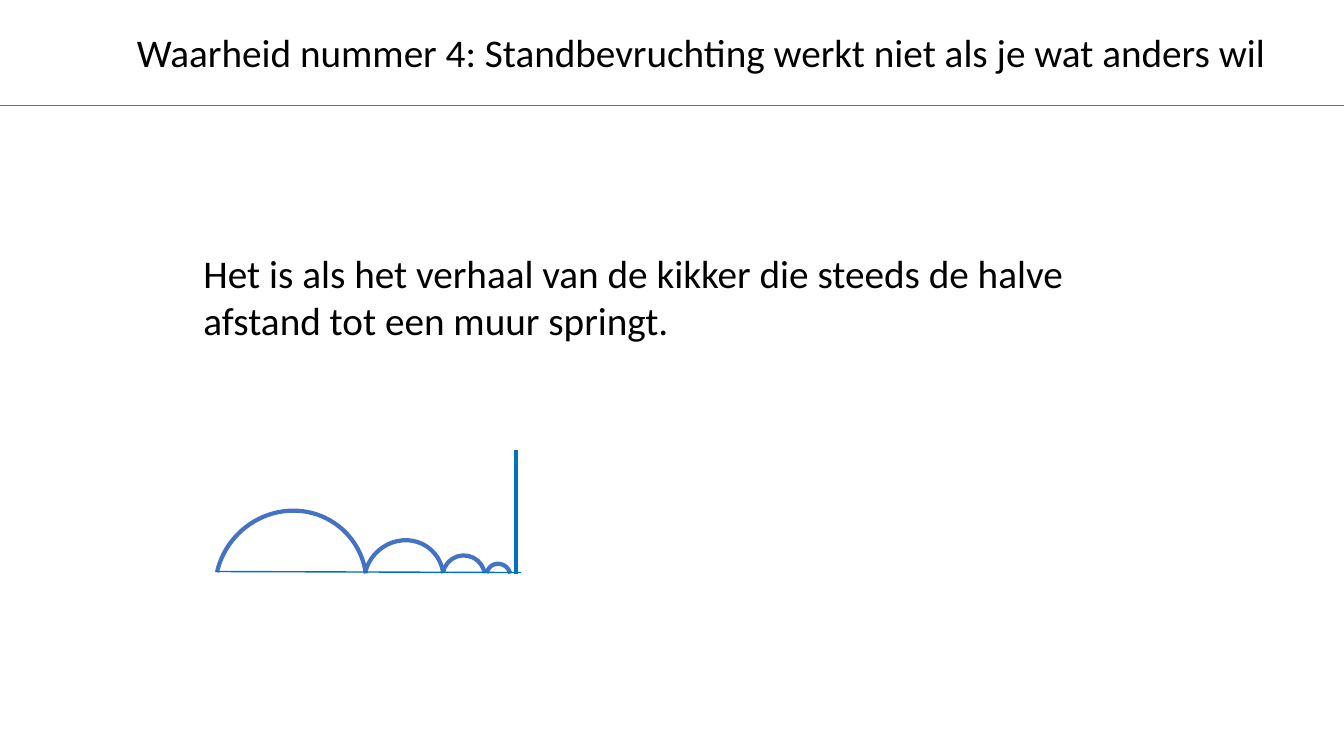
from typing import NamedTuple

from lxml import etree
from pptx import Presentation
from pptx.dml.color import RGBColor
from pptx.enum import shapes, text
from pptx.oxml.ns import qn
from pptx.util import Inches, Pt

COLORS = {"hop": "4472C4", "wall": "0070C0", "text": "000000"}
TILT = 311.6
SWEEP = (143.72, 23.04)


class Label(NamedTuple):
    words: str
    left: float
    top: float
    width: float
    height: float
    wrap: bool


class Line(NamedTuple):
    x1: float
    y1: float
    x2: float
    y2: float
    color: str
    weight: float


class Hop(NamedTuple):
    left: float
    top: float
    width: float
    height: float


LABELS = [
    Label("Waarheid nummer 4: Standbevruchting werkt niet als je wat anders wil",
          1.26, 0.23, 11.52, 0.57, False),
    Label("Het is als het verhaal van de kikker die steeds de halve "
          "afstand tot een muur springt.", 1.92, 2.42, 9.17, 1.04, True),
]
RULE = Line(0, 1.05, 13.33, 1.05, "hop", 0.5)
WALL = Line(5.12, 4.46, 5.12, 5.69, "wall", 3)
FLOOR = Line(2.14, 5.67, 5.17, 5.68, "wall", 1)
HOPS = [
    Hop(2.12, 5.08, 1.53, 1.48),
    Hop(3.6, 5.37, 0.81, 0.77),
    Hop(4.39, 5.51, 0.42, 0.42),
    Hop(4.83, 5.59, 0.23, 0.24),
]


def ink(name: str) -> RGBColor:
    return RGBColor.from_string(COLORS[name])


def add_label(slide, item: Label) -> None:
    box = slide.shapes.add_textbox(
        Inches(item.left), Inches(item.top), Inches(item.width), Inches(item.height))
    frame = box.text_frame
    frame.word_wrap = item.wrap
    frame.auto_size = text.MSO_AUTO_SIZE.SHAPE_TO_FIT_TEXT
    run = frame.paragraphs[0].add_run()
    run.text = item.words
    run.font.name = "Calibri"
    run.font.size = Pt(28)
    run.font.color.rgb = ink("text")


def add_line(slide, item: Line) -> None:
    line = slide.shapes.add_connector(
        shapes.MSO_CONNECTOR.STRAIGHT, Inches(item.x1), Inches(item.y1),
        Inches(item.x2), Inches(item.y2))
    line.line.color.rgb = ink(item.color)
    line.line.width = Pt(item.weight)
    etree.SubElement(line._element.spPr, qn("a:effectLst"))


def add_hop(slide, item: Hop) -> None:
    arc = slide.shapes.add_shape(
        shapes.MSO_SHAPE.ARC, Inches(item.left), Inches(item.top),
        Inches(item.width), Inches(item.height))
    arc.adjustments[0], arc.adjustments[1] = SWEEP
    arc.rotation = TILT
    arc.shadow.inherit = False
    arc.fill.background()
    arc.line.color.rgb = ink("hop")
    arc.line.width = Pt(3)


def main() -> None:
    deck = Presentation()
    deck.slide_width, deck.slide_height = Inches(13.33), Inches(7.5)
    slide = deck.slides.add_slide(deck.slide_layouts[6])

    # Title, rule and story
    add_line(slide, RULE)
    for label in LABELS:
        add_label(slide, label)

    # Frog hops towards the wall
    for hop in HOPS:
        add_hop(slide, hop)
    for line in (WALL, FLOOR):
        add_line(slide, line)

    deck.save("out.pptx")


if __name__ == "__main__":
    main()
